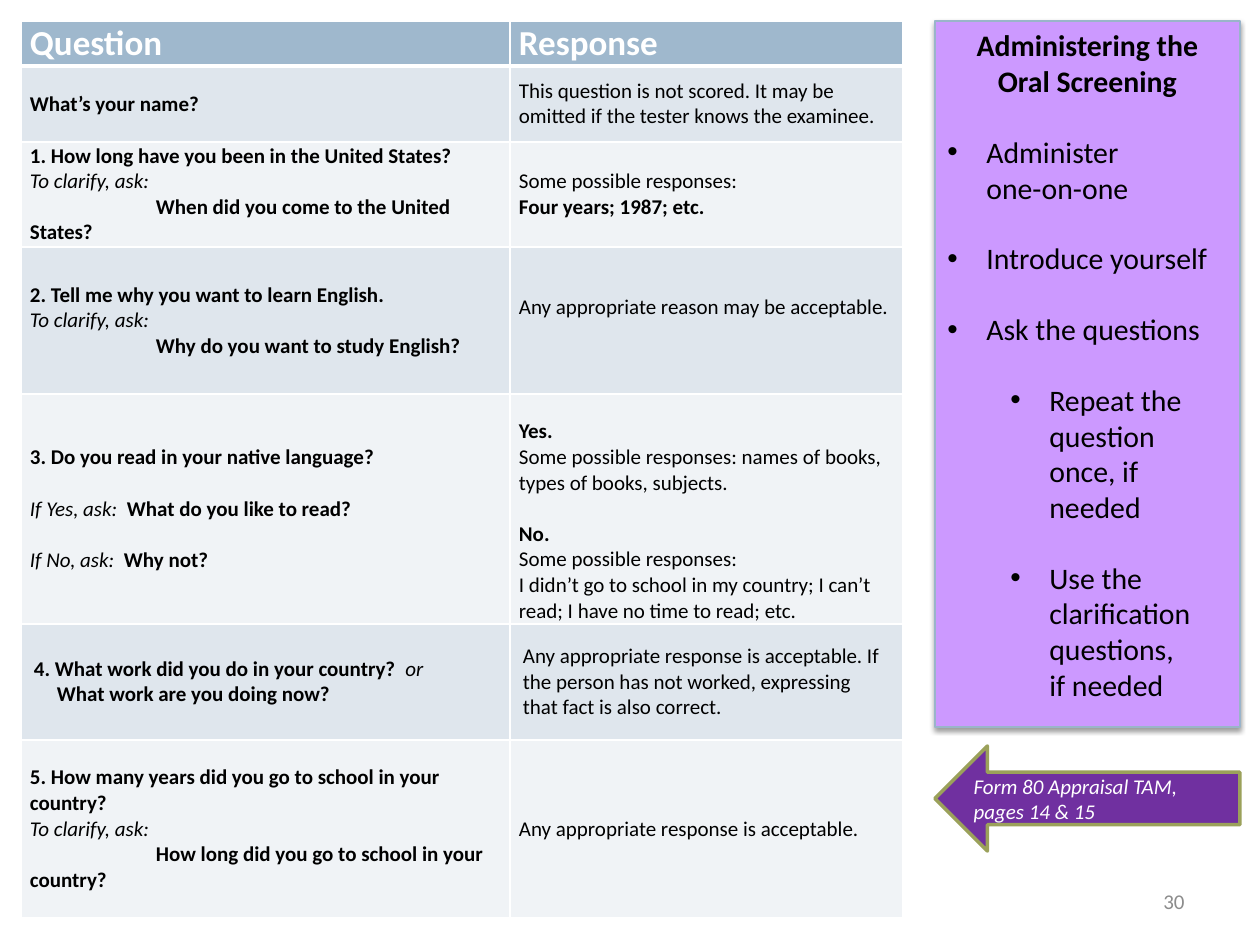
from dataclasses import dataclass
from lxml.etree import SubElement as Sub
from pptx import Presentation
from pptx.dml.color import RGBColor
from pptx.enum.shapes import MSO_SHAPE as Kind
from pptx.enum.text import MSO_ANCHOR as Anchor, PP_ALIGN as Align
from pptx.oxml.ns import qn
from pptx.util import Emu, Pt


def px(n):
    return Emu(round(n * 914400 / 126))


def color(code):
    return RGBColor.from_string(code)


@dataclass
class Para:
    runs: list
    gap: float = 0
    left: int = 0
    first: int = 0
    dot: bool = False
    align: object = Align.LEFT


def bold(text, **more):
    return Para([(text, "b")], **more)


def plain(text, **more):
    return Para([(text, "")], **more)


def ital(text, **more):
    return Para([(text, "i")], **more)


def ask(text):
    return bold(text, first=126)


def pair(lead, text):
    return Para([(lead, "i"), (text, "b")], gap=LINE)


def item(text, left=39):
    return plain(text, gap=20, left=left, first=-39, dot=True)


@dataclass
class Cell:
    paras: list
    side: int = 9
    top: int = 0
    low: int = 0


class Deck:
    face = "Calibri"
    white = "FFFFFF"
    black = "000000"

    def __init__(self):
        self.prs = Presentation()
        self.prs.slide_width, self.prs.slide_height = px(1260), px(945)
        self.slide = self.prs.slides.add_slide(self.prs.slide_layouts[6])

    def fill_text(self, frame, paras, size, ink):
        frame.word_wrap = True
        for n, para in enumerate(paras):
            p = frame.add_paragraph() if n else frame.paragraphs[0]
            p.alignment = para.align
            if para.gap and n:
                p.space_before = Pt(para.gap)
            props = p._p.get_or_add_pPr()
            props.set("marL", str(px(para.left)))
            props.set("indent", str(px(para.first)))
            if para.dot:
                Sub(props, qn("a:buFont")).set("typeface", "Arial")
                Sub(props, qn("a:buChar")).set("char", "•")
            for text, style in para.runs:
                for k, part in enumerate(text.split("\n")):
                    if k:
                        p.add_line_break()
                    run = p.add_run()
                    run.text = part
                    font = run.font
                    font.name, font.size = self.face, Pt(size)
                    font.bold, font.italic = style == "b", style == "i"
                    font.color.rgb = color(ink)

    def border(self, cell, side, width):
        line = Sub(cell._tc.get_or_add_tcPr(), qn("a:ln" + side))
        line.set("w", str(Pt(width)))
        Sub(Sub(line, qn("a:solidFill")), qn("a:srgbClr")).set("val", self.white)

    def table(self, x, y, cols, highs, rows, fills):
        shape = self.slide.shapes.add_table(
            len(rows), len(cols), px(x), px(y), px(sum(cols)), px(sum(highs)))
        grid = shape.table
        for col, wide in zip(grid.columns, cols):
            col.width = px(wide)
        for r, (row, high) in enumerate(zip(rows, highs)):
            grid.rows[r].height = px(high)
            for c, data in enumerate(row):
                cell = grid.cell(r, c)
                cell.margin_left = cell.margin_right = px(data.side)
                cell.margin_top, cell.margin_bottom = px(data.top), px(data.low)
                cell.vertical_anchor = Anchor.MIDDLE
                for side in "LRTB":
                    thick = (r, side) in ((0, "B"), (1, "T"))
                    self.border(cell, side, 3 if thick else 1)
                cell.fill.solid()
                cell.fill.fore_color.rgb = color(fills[r])
                size, ink = (12, self.black) if r else (20, self.white)
                self.fill_text(cell.text_frame, data.paras, size, ink)

    def shape(self, kind, box, fill, line, width, paras, size, ink, anchor):
        shape = self.slide.shapes.add_shape(kind, *map(px, box))
        shape.shadow.inherit = False
        shape.fill.solid()
        shape.fill.fore_color.rgb = color(fill)
        shape.line.color.rgb = color(line)
        shape.line.width = Pt(width)
        shape.text_frame.vertical_anchor = anchor
        self.fill_text(shape.text_frame, paras, size, ink)
        return shape

    def shade(self, shape):
        effect = shape._element.spPr.find(qn("a:effectLst"))
        cast = Sub(effect, qn("a:outerShdw"), blurRad=str(Pt(3.1)),
                   dist=str(Pt(1.6)), dir="5400000", rotWithShape="0")
        ink = Sub(cast, qn("a:srgbClr"), val=self.black)
        Sub(ink, qn("a:alpha"), val="38000")

    def label(self, box, paras, size, ink):
        frame = self.slide.shapes.add_textbox(*map(px, box)).text_frame
        frame.vertical_anchor = Anchor.MIDDLE
        self.fill_text(frame, paras, size, ink)


LINE = 14.65
HIGHS = [45, 76, 105, 147, 230, 116, 178]
FILLS = ["9FB8CD"] + ["DFE6ED", "F0F3F6"] * 3
CLEAR = ital("To clarify, ask:")
ROWS = [
    [Cell([bold("Question")]), Cell([bold("Response")])],
    [Cell([bold("What’s your name?")]),
     Cell([plain("This question is not scored. It may be omitted if the "
                 "tester knows the examinee.")])],
    [Cell([bold("1. How long have you been in the United States?"), CLEAR,
           ask("When did you come to the United States?")]),
     Cell([plain("Some possible responses:"), bold("Four years; 1987; etc.")])],
    [Cell([bold("2. Tell me why you want to learn English."), CLEAR,
           ask("Why do you want to study English?")]),
     Cell([plain("Any appropriate reason may be acceptable.")], low=26)],
    [Cell([bold("3. Do you read in your native language?"),
           pair("If Yes, ask:  ", "What do you like to read?"),
           pair("If No, ask:  ", "Why not?")]),
     Cell([bold("Yes."),
           plain("Some possible responses: names of books, types of books, "
                 "subjects."),
           bold("No.", gap=LINE),
           plain("Some possible responses:\nI didn’t go to school in my "
                 "country; I can’t read; I have no time to read; etc.")],
          top=25)],
    [Cell([Para([("4. What work did you do in your country?  ", "b"),
                 ("or", "i")]),
           bold("What work are you doing now?", left=23)], side=13),
     Cell([plain("Any appropriate response is acceptable. If the person has "
                 "not worked, expressing that fact is also correct.")],
          side=13)],
    [Cell([bold("5. How many years did you go to school in your country?"),
           CLEAR, ask("How long did you go to school in your country?")]),
     Cell([plain("Any appropriate response is acceptable.")])],
]
STEPS = [
    bold("Administering the\nOral Screening", align=Align.CENTER),
    item("Administer\none-on-one"),
    item("Introduce yourself"),
    item("Ask the questions"),
    item("Repeat the question once, if needed", left=102),
    item("Use the clarification questions,\nif needed", left=102),
]


def main():
    deck = Deck()
    deck.table(21, 21, [489, 393], HIGHS, ROWS, FILLS)
    deck.label((903, 876, 294, 50), [plain("30", align=Align.RIGHT)], 12, "8C8C8C")
    panel = deck.shape(Kind.RECTANGLE, (935, 21, 305, 706), "CC99FF", "9AB4CA",
                       0.75, STEPS, 17, deck.black, Anchor.TOP)
    deck.shade(panel)
    deck.shape(Kind.LEFT_ARROW, (935, 746, 305, 105), "7030A0", "9BA15A", 2,
               [ital("Form 80 Appraisal TAM,\npages 14 & 15")], 12, deck.white,
               Anchor.MIDDLE)
    deck.prs.save("out.pptx")


if __name__ == "__main__":
    main()
